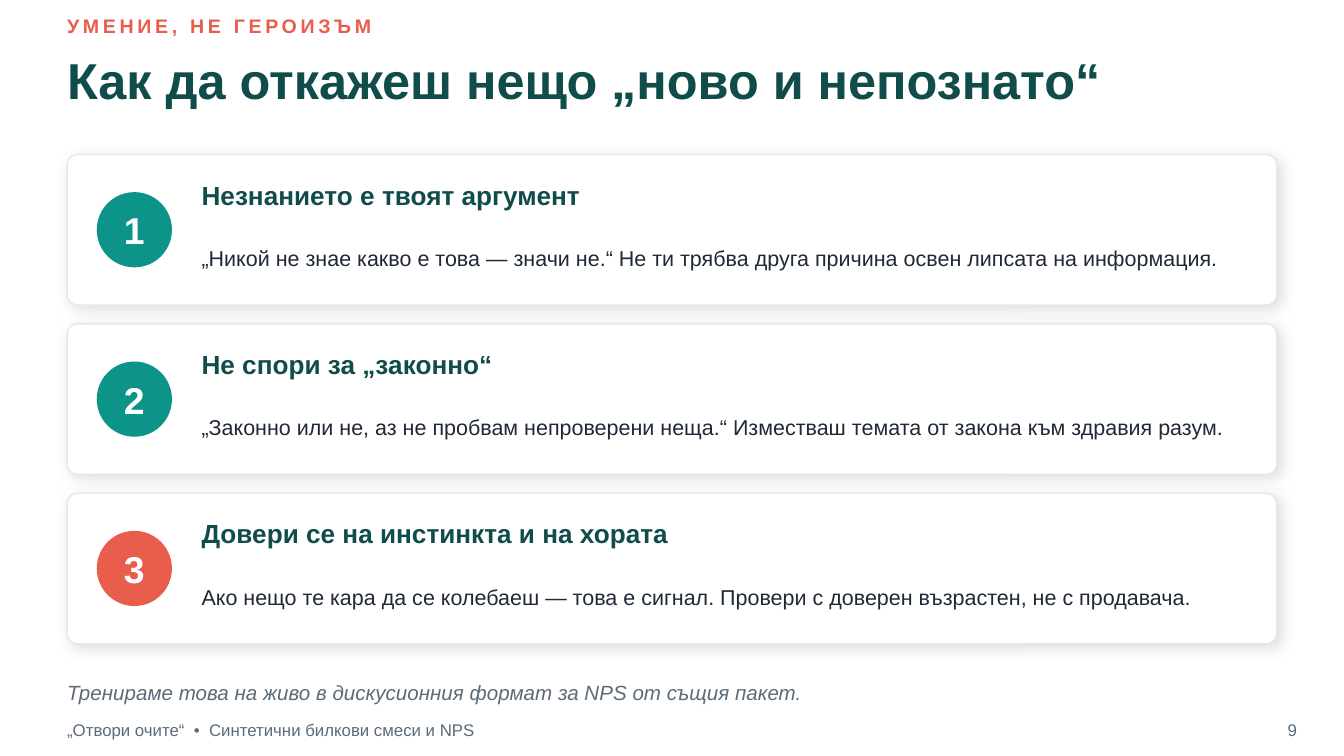
from lxml.etree import SubElement
from pptx import Presentation
from pptx.dml.color import RGBColor
from pptx.enum.shapes import MSO_SHAPE as Shape
from pptx.enum.text import MSO_ANCHOR as Anchor, PP_ALIGN as Align
from pptx.oxml.ns import qn
from pptx.util import Inches, Pt

CORAL, TEAL, PINE = "E85D4C", "0D9488", "0F4C4A"
INK, SLATE, MIST, WHITE = "1F2937", "5B6B7A", "E5E7EB", "FFFFFF"

deck = Presentation()
deck.slide_width = Inches(10)
deck.slide_height = deck.slide_width * 9 // 16
page = deck.slides.add_slide(deck.slide_layouts[6])
cell = deck.slide_width / 100


def paint(target, color):
    if hasattr(target, "solid"):
        target.solid()
        target = target.fore_color
    target.rgb = RGBColor.from_string(color)


def write(area, spans, size, color, bold=False, italic=False, align=Align.LEFT):
    box = page.shapes.add_textbox(*[round(cell * side) for side in area])
    frame = box.text_frame
    frame.word_wrap = True
    frame.vertical_anchor = Anchor.MIDDLE
    frame.margin_left = frame.margin_right = 0
    frame.margin_top = frame.margin_bottom = 0
    para = frame.paragraphs[0]
    para.alignment = align
    for text, spacing in spans:
        span = para.add_run()
        span.text = text
        span.font.name = "Arial"
        span.font.size = Pt(size)
        span.font.bold = bold
        span.font.italic = italic
        paint(span.font.color, color)
        if spacing:
            span.font._element.set("spc", str(round(spacing * 100)))


left, wide = 5, 90
write((left, 0.6, wide, 2.6), [("УМЕНИЕ, НЕ ГЕРОИЗЪМ", 2)], 10.5, CORAL, bold=True)
write((left, 2.8, wide, 6.2), [("Как да откажеш нещо „ново и непознато“", 0)], 27, PINE, bold=True)

cards = [
    ("Незнанието е твоят аргумент",
     "„Никой не знае какво е това — значи не.“ Не ти трябва друга причина освен липсата на информация.",
     TEAL),
    ("Не спори за „законно“",
     "„Законно или не, аз не пробвам непроверени неща.“ Изместваш темата от закона към здравия разум.",
     TEAL),
    ("Довери се на инстинкта и на хората",
     "Ако нещо те кара да се колебаеш — това е сигнал. Провери с доверен възрастен, не с продавача.",
     CORAL),
]
first_top, card_height, gap = 11.5, 11.2, 1.4
disc_size, text_left, text_wide = 5.6, 15, 78

for index, (heading, advice, accent) in enumerate(cards):
    top = first_top + index * (card_height + gap)
    card = page.shapes.add_shape(
        Shape.ROUNDED_RECTANGLE, *[round(cell * side) for side in (left, top, wide, card_height)])
    card.adjustments[0] = 0.07
    paint(card.fill, WHITE)
    paint(card.line.color, MIST)
    card.line.width = Pt(0.75)
    card.shadow.inherit = False
    effects = card._element.spPr.find(qn("a:effectLst"))
    shadow = SubElement(effects, qn("a:outerShdw"), blurRad=str(Pt(7)), dist=str(Pt(2)),
                        dir=str(45 * 60000), algn="bl", rotWithShape="0")
    tint = SubElement(shadow, qn("a:srgbClr"), val="000000")
    SubElement(tint, qn("a:alpha"), val="13000")

    disc_area = (left + 2.2, top + (card_height - disc_size) / 2, disc_size, disc_size)
    disc = page.shapes.add_shape(Shape.OVAL, *[round(cell * side) for side in disc_area])
    disc.shadow.inherit = False
    paint(disc.fill, accent)
    disc.line.fill.background()

    write(disc_area, [(str(index + 1), 0)], 20, WHITE, bold=True, align=Align.CENTER)
    write((text_left, top + 1.4, text_wide, 3.2), [(heading, 0)], 14, PINE, bold=True)
    write((text_left, top + 4.7, text_wide, 6), [(advice, 0)], 11.5, INK)

write((left, 50, wide, 3),
      [("Тренираме това на живо в дискусионния формат за NPS от същия пакет.", 0)],
      11, SLATE, italic=True)
footer = [("„Отвори очите“", 0), (" •", 2.5), (" Синтетични билкови смеси и NPS", 0)]
write((left, 52.8, 60, 3), footer, 9, SLATE)
write((93, 52.8, 3.5, 3), [("9", 0)], 9, SLATE, align=Align.RIGHT)

deck.save("out.pptx")
